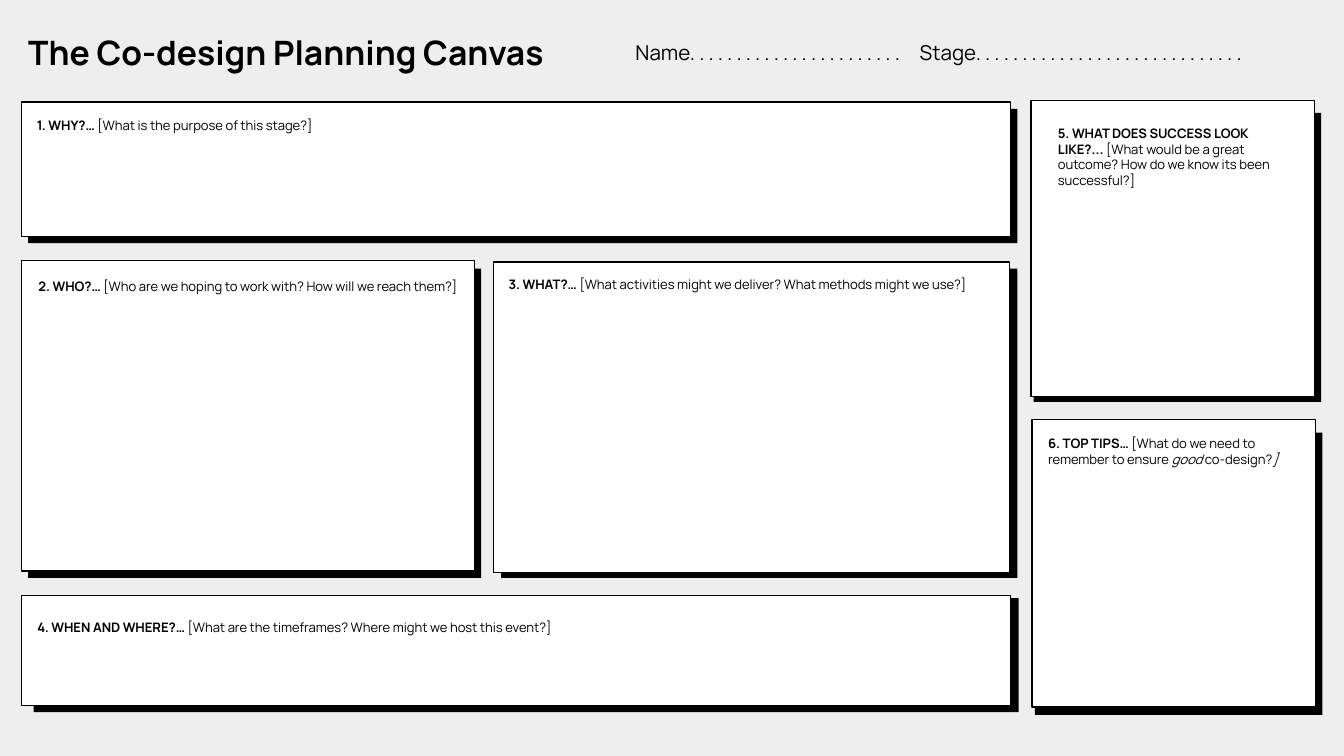
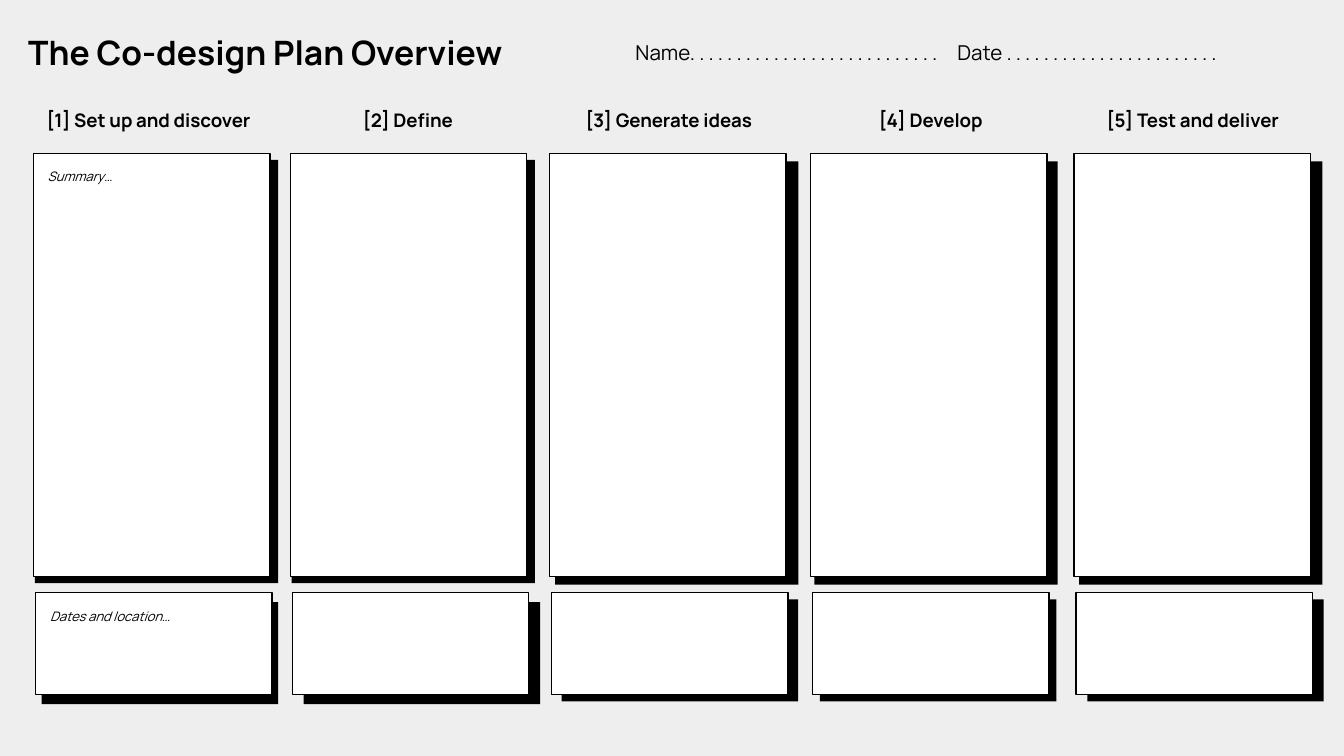
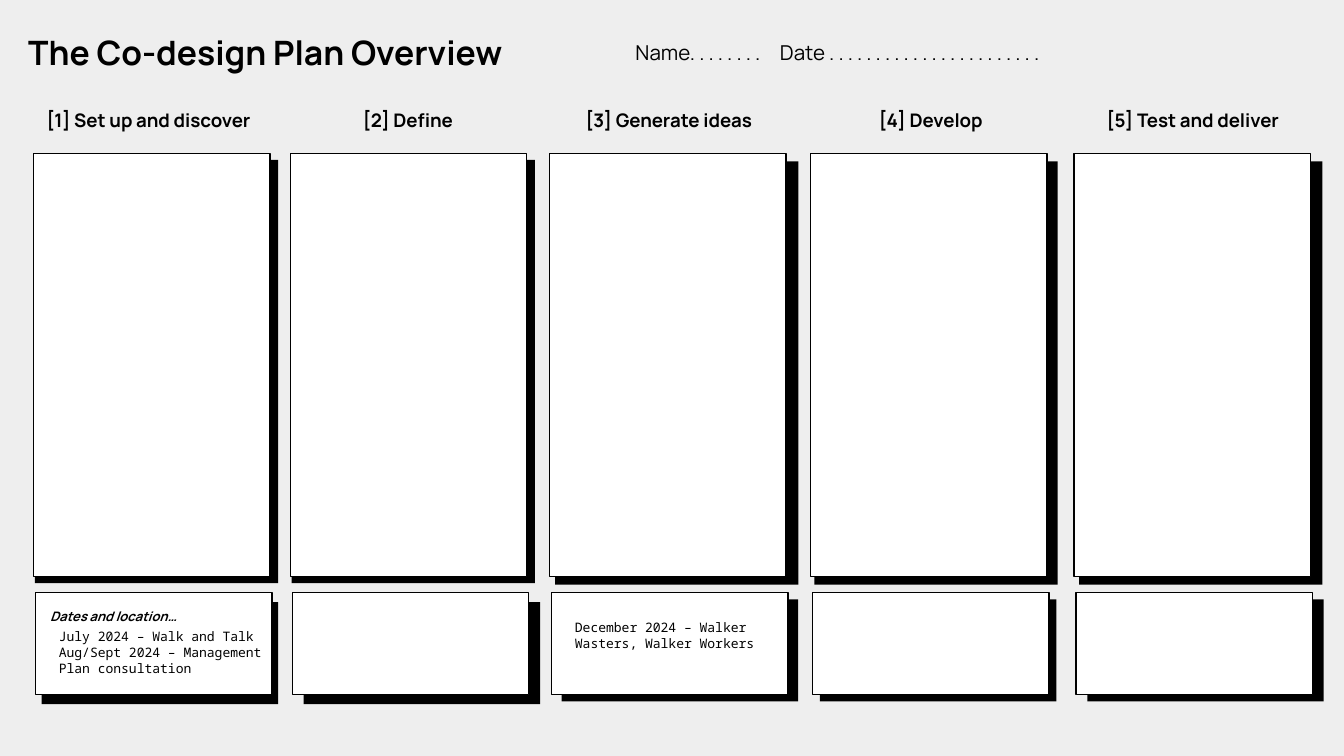
from dataclasses import dataclass

from lxml.etree import SubElement
from pptx import Presentation
from pptx.dml.color import RGBColor
from pptx.enum.shapes import MSO_SHAPE as Shape
from pptx.enum.text import MSO_ANCHOR as Anchor, MSO_AUTO_SIZE as AutoSize, PP_ALIGN as Align
from pptx.oxml.ns import qn
from pptx.util import Inches, Pt

# Shared look
SLIDE_W = Inches(10)
SLIDE_H = SLIDE_W * 9 // 16
CELL = SLIDE_W / 100  # square grid cell; all places are in columns and rows
PAPER, INK, CARD = "EEEEEE", "000000", "FFFFFF"
SANS, MONO = "Manrope", "Noto Sans Mono"
TITLE_SIZE, FIELD_SIZE, HEADING_SIZE, BODY_SIZE = 18, 11, 10, 7
INSET = Inches(0.1)

# Planning canvas cards: face, shadow
CANVAS_CARDS = [
    ((76.8, 31.2, 21.1, 21.4), (77, 32.2, 21.4, 21)),
    ((76.7, 7.5, 21.1, 22), (76.9, 8.4, 21.4, 21.5)),
    ((1.6, 44.3, 73.6, 8.2), (2.5, 44.5, 73.3, 8.5)),
    ((36.7, 19.5, 38.4, 23.1), (37.3, 20, 38.4, 23)),
    ((1.6, 19.4, 33.7, 23.1), (2.1, 20, 33.7, 23)),
    ((1.6, 7.6, 73.6, 10), (2.1, 8.1, 73.6, 10)),
]

# Planning canvas prompts: box, bold question, hint
CANVAS_PROMPTS = [
    ((1.6, 7.6, 25.4, 3.3), "1. WHY?… ", "[What is the purpose of this stage?]"),
    ((1.6, 19.4, 34, 5.8), "2. WHO?… ",
     "[Who are we hoping to work with? How will we reach them?]"),
    ((36.7, 19.4, 37.9, 3.3), "3. WHAT?… ",
     "[What activities might we deliver? What methods might we use?]"),
    ((1.6, 44.9, 61.8, 4), "4. WHEN AND WHERE?… ",
     "[What are the timeframes? Where might we host this event?]"),
    ((76.7, 7.3, 21.1, 22), "5. WHAT DOES SUCCESS LOOK LIKE?... ",
     "[What would be a great outcome? How do we know its been successful?]"),
]
TOP_TIPS = [("6. TOP TIPS… ", "b"), ("[What do we need to remember to ensure ", ""),
            ("good ", "i"), ("co-design?", ""), ("]", "i")]


@dataclass
class Stage:
    """One column of the overview: heading, left edges and shadow corners."""
    heading: str
    heading_left: float
    left: float
    summary_shadow: tuple
    dates_shadow: tuple


STAGES = [
    Stage("[1] Set up and discover", 2, 2.5, (2.6, 11.9), (3.1, 44.8)),
    Stage("[2] Define", 21.3, 21.6, (21.7, 11.9), (22.6, 44.8)),
    Stage("[3] Generate ideas", 40.7, 40.9, (41.3, 12), (41.8, 44.6)),
    Stage("[4] Develop", 60.2, 60.3, (60.6, 12), (61, 44.6)),
    Stage("[5] Test and deliver", 79.7, 79.9, (80.3, 12), (80.9, 44.6)),
]
CARD_W, SUMMARY_H, DATES_H = 17.6, 31.5, 7.6
SUMMARY_TOP, DATES_TOP = 11.4, 44.1
SUMMARY_SHADOW_W = HEADING_W = 18.1
DATES_SHIFT = 0.15


def color(hex_code):
    return RGBColor.from_string(hex_code)


def grid(box):
    return [round(cells * CELL) for cells in box]


def dots(count):
    return " ".join("." * count)


def write(frame, paragraphs, size, font=SANS, align=Align.LEFT):
    """Fill a frame; each paragraph is a list of (text, style letters)."""
    frame.word_wrap = True
    frame.auto_size = AutoSize.NONE
    frame.vertical_anchor = Anchor.TOP
    frame.margin_left = frame.margin_right = INSET
    frame.margin_top = frame.margin_bottom = INSET
    for index, pieces in enumerate(paragraphs):
        paragraph = frame.add_paragraph() if index else frame.paragraphs[0]
        paragraph.alignment = align
        paragraph.line_spacing = 1.0
        paragraph.space_before = Pt(0)
        for text, style in pieces:
            run = paragraph.add_run()
            run.text = text
            run.font.name, run.font.size = font, Pt(size)
            run.font.bold, run.font.italic = "b" in style, "i" in style
            run.font.color.rgb = color(INK)


def add_text(slide, box, paragraphs, size, **look):
    frame = slide.shapes.add_textbox(*grid(box)).text_frame
    write(frame, paragraphs, size, **look)
    return frame


def add_prompt(slide, box, pieces):
    """Unfilled rounded box whose text sits on a card."""
    prompt = slide.shapes.add_shape(Shape.ROUNDED_RECTANGLE, *grid(box))
    prompt.shadow.inherit = False
    prompt.fill.background()
    prompt.line.fill.background()
    write(prompt.text_frame, [pieces], BODY_SIZE)


def add_panel(slide, box, fill, outlined=False):
    panel = slide.shapes.add_shape(Shape.RECTANGLE, *grid(box))
    panel.shadow.inherit = False
    panel.fill.solid()
    panel.fill.fore_color.rgb = color(fill)
    if outlined:
        panel.line.color.rgb = color(INK)
        panel.line.width = Pt(0.75)
    else:
        panel.line.fill.background()


def add_card(slide, face, shadow):
    add_panel(slide, shadow, INK)
    add_panel(slide, face, CARD, outlined=True)


def add_page(prs, title, title_width, fields, second_field):
    """Slide with its title and two dotted fields, the second at a tab stop."""
    slide = prs.slides.add_slide(prs.slide_layouts[5])
    heading = slide.shapes.title
    heading.left, heading.top, heading.width, heading.height = grid((1.1, 1.4, title_width, 5))
    write(heading.text_frame, [[(title, "b")]], TITLE_SIZE)

    frame = add_text(slide, (46.3, 2, 54.5, 3.9), [[("\t".join(fields), "")]], FIELD_SIZE)
    tabs = SubElement(frame.paragraphs[0]._p.get_or_add_pPr(), qn("a:tabLst"))
    SubElement(tabs, qn("a:tab"), pos=str(round(second_field * CELL)), algn="l")
    return slide


def add_canvas(prs):
    slide = add_page(prs, "The Co-design Planning Canvas", 97.8,
                     ["Name" + dots(23), "Stage" + dots(29)], 21.15)
    for face, shadow in CANVAS_CARDS:
        add_card(slide, face, shadow)
    for box, question, hint in CANVAS_PROMPTS:
        add_prompt(slide, box, [(question, "b"), (hint, "")])
    add_text(slide, (77, 31.4, 20.8, 6.6), [TOP_TIPS], BODY_SIZE)


def add_overview(prs, name_dots, date_field):
    slide = add_page(prs, "The Co-design Plan Overview", 48.9,
                     ["Name" + dots(name_dots), "Date " + dots(23)], date_field)
    for stage in STAGES:
        add_text(slide, (stage.heading_left, 7.1, HEADING_W, 3.7),
                 [[(stage.heading, "b")]], HEADING_SIZE, align=Align.CENTER)
        add_card(slide, (stage.left, SUMMARY_TOP, CARD_W, SUMMARY_H),
                 (*stage.summary_shadow, SUMMARY_SHADOW_W, SUMMARY_H))
        add_card(slide, (stage.left + DATES_SHIFT, DATES_TOP, CARD_W, DATES_H),
                 (*stage.dates_shadow, CARD_W, DATES_H))
    return slide


def add_dates_prompt(slide, style):
    add_prompt(slide, (2.6, DATES_TOP, 19.1, 3.1), [("Dates and location…", style)])


def main():
    prs = Presentation()
    prs.slide_width, prs.slide_height = SLIDE_W, SLIDE_H
    backdrop = prs.slide_master.background.fill
    backdrop.solid()
    backdrop.fore_color.rgb = color(PAPER)

    # Planning canvas
    add_canvas(prs)

    # Blank overview
    blank = add_overview(prs, 27, 23.95)
    add_prompt(blank, (2.4, SUMMARY_TOP, 20.1, 3.3), [("Summary…", "i")])
    add_dates_prompt(blank, "i")

    # Overview with dates filled in
    dated = add_overview(prs, 8, 10.75)
    add_dates_prompt(dated, "bi")
    add_text(dated, (3.4, 45.8, 17.6, 5.6),
             [[("July 2024 – Walk and Talk", "")],
              [("Aug/Sept 2024 – Management Plan consultation", "")]],
             BODY_SIZE, font=MONO)
    add_text(dated, (41.8, 45.1, 17.6, 4.4),
             [[("December 2024 – Walker Wasters, Walker Workers", "")]],
             BODY_SIZE, font=MONO)

    prs.save("out.pptx")


if __name__ == "__main__":
    main()
